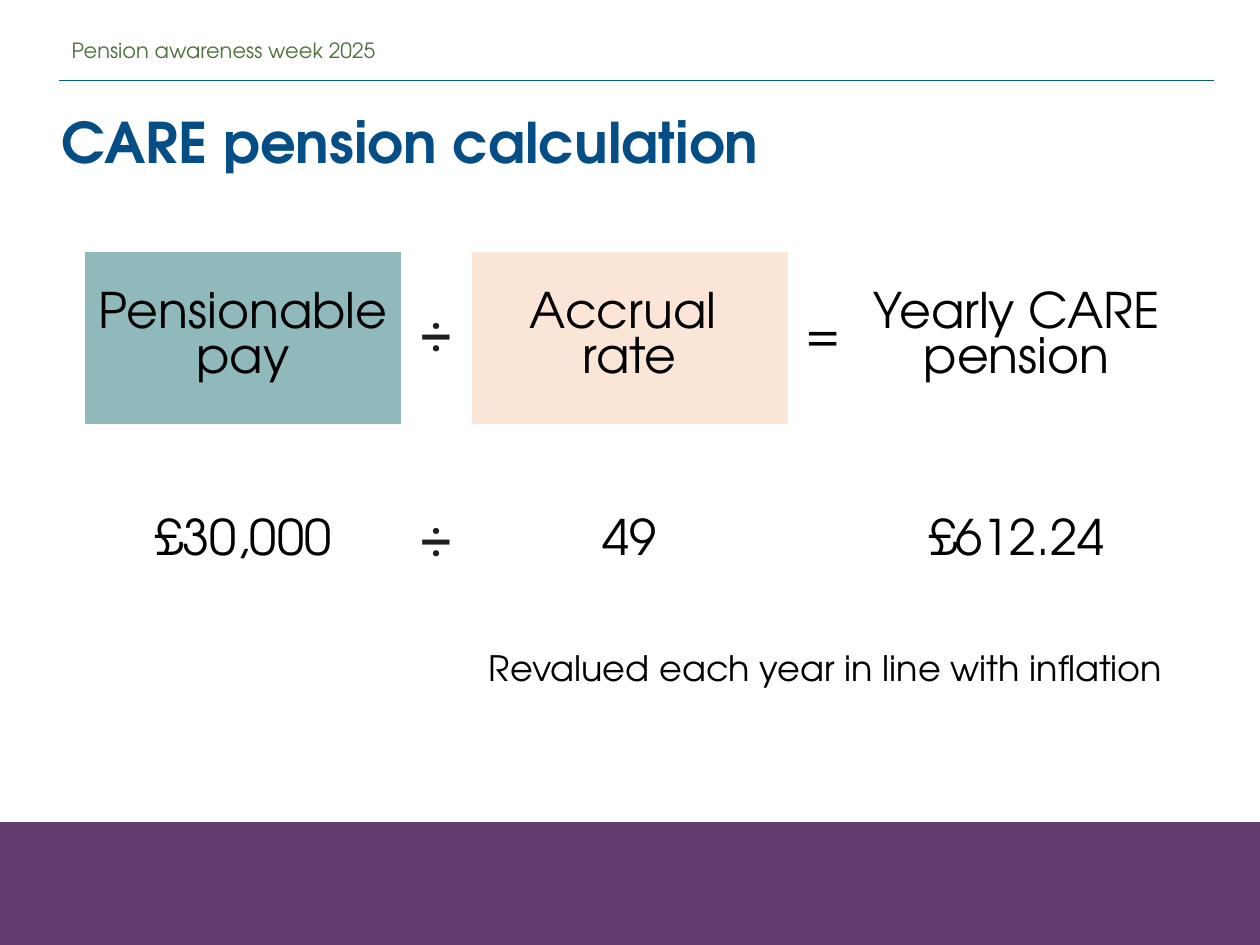
from lxml import etree
from pptx import Presentation
from pptx.dml.color import RGBColor
from pptx.enum.shapes import MSO_CONNECTOR, MSO_SHAPE
from pptx.enum.text import MSO_ANCHOR, PP_ALIGN
from pptx.oxml.ns import qn
from pptx.util import Pt

PURPLE = RGBColor(0x63, 0x3B, 0x71)
TEAL = RGBColor(0x0B, 0x5E, 0x74)
GREEN = RGBColor(0x4F, 0x70, 0x40)
BLUE = RGBColor(0x04, 0x4D, 0x85)
AQUA = RGBColor(0x8F, 0xB9, 0xBB)
PEACH = RGBColor(0xFB, 0xE5, 0xD6)
BLACK = RGBColor(0, 0, 0)
DARK = RGBColor(0x1F, 0x1F, 0x1F)
SANS = "TeX Gyre Adventor"
SIGN = "Roboto"
STRAIGHT = MSO_CONNECTOR.STRAIGHT
RECT = MSO_SHAPE.RECTANGLE
MIDDLE, BOTTOM = MSO_ANCHOR.MIDDLE, MSO_ANCHOR.BOTTOM
CENTER, RIGHT = PP_ALIGN.CENTER, PP_ALIGN.RIGHT

COLS = [181.44, 39.6, 181.44, 39.6, 181.44]
ROWS = [99.4, 40.3, 54, 59.8]
CELLS = [
    ["Pensionable pay", "÷", "Accrual \vrate", "=", "Yearly CARE pension"],
    [""] * 5,
    ["£30,000", "÷", "49", "", "£612.24"],
    ["Revalued each year in line with inflation"] + [""] * 4,
]
FILLS = {(0, 0): AQUA, (0, 2): PEACH}


def style(para, size, color, name=SANS, bold=False):
    font = para.font
    font.size, font.name, font.bold = Pt(size), name, bold
    font.color.rgb = color


def add_band(slide):
    band = slide.shapes.add_shape(RECT, 0, Pt(470.2), Pt(720), Pt(69.8))
    band.shadow.inherit = False
    band.fill.solid()
    band.fill.fore_color.rgb = PURPLE
    band.line.color.rgb = PURPLE
    band.line.width = Pt(1)


def add_rule(slide):
    rule = slide.shapes.add_connector(STRAIGHT, Pt(33.8), Pt(46), Pt(694), Pt(46))
    rule.line.color.rgb = TEAL
    rule.line.width = Pt(0.5)
    etree.SubElement(rule._element.spPr, qn("a:effectLst"))


def add_label(slide, text, box, size, color, bold=False):
    frame = slide.shapes.add_textbox(*map(Pt, box)).text_frame
    frame.word_wrap = True
    frame.vertical_anchor = MIDDLE
    frame.margin_top = frame.margin_bottom = 0
    para = frame.paragraphs[0]
    para.text = text
    style(para, size, color, bold=bold)


def fill_cell(cell, text, color, last):
    if color:
        cell.fill.solid()
        cell.fill.fore_color.rgb = color
    else:
        cell.fill.background()
    cell.vertical_anchor = BOTTOM if last else MIDDLE
    para = cell.text_frame.paragraphs[0]
    para.text = text
    para.alignment = RIGHT if last else CENTER
    if text == "÷":
        style(para, 32, DARK, SIGN)
    elif text:
        style(para, 20 if last else 28, BLACK)
    else:
        style(para, 12, BLACK)


def add_sum(slide):
    table = slide.shapes.add_table(
        len(ROWS), len(COLS), Pt(48.2), Pt(143.3), Pt(sum(COLS)), Pt(sum(ROWS))
    ).table
    table.first_row = table.horz_banding = False
    for col, width in zip(table.columns, COLS):
        col.width = Pt(width)
    for row, height in zip(table.rows, ROWS):
        row.height = Pt(height)
    end = len(ROWS) - 1
    table.cell(end, 0).merge(table.cell(end, len(COLS) - 1))
    for r, texts in enumerate(CELLS):
        for c, text in enumerate(texts):
            fill_cell(table.cell(r, c), text, FILLS.get((r, c)), r == end)


def main():
    deck = Presentation()
    deck.slide_width, deck.slide_height = Pt(720), Pt(540)
    slide = deck.slides.add_slide(deck.slide_layouts[6])
    add_band(slide)
    add_rule(slide)
    add_label(slide, "Pension awareness week 2025", (33.8, 19.4, 468.7, 18), 12, GREEN)
    add_label(slide, "CARE pension calculation", (28.1, 57.6, 671.8, 46), 32, BLUE, True)
    add_sum(slide)
    deck.save("out.pptx")


if __name__ == "__main__":
    main()
